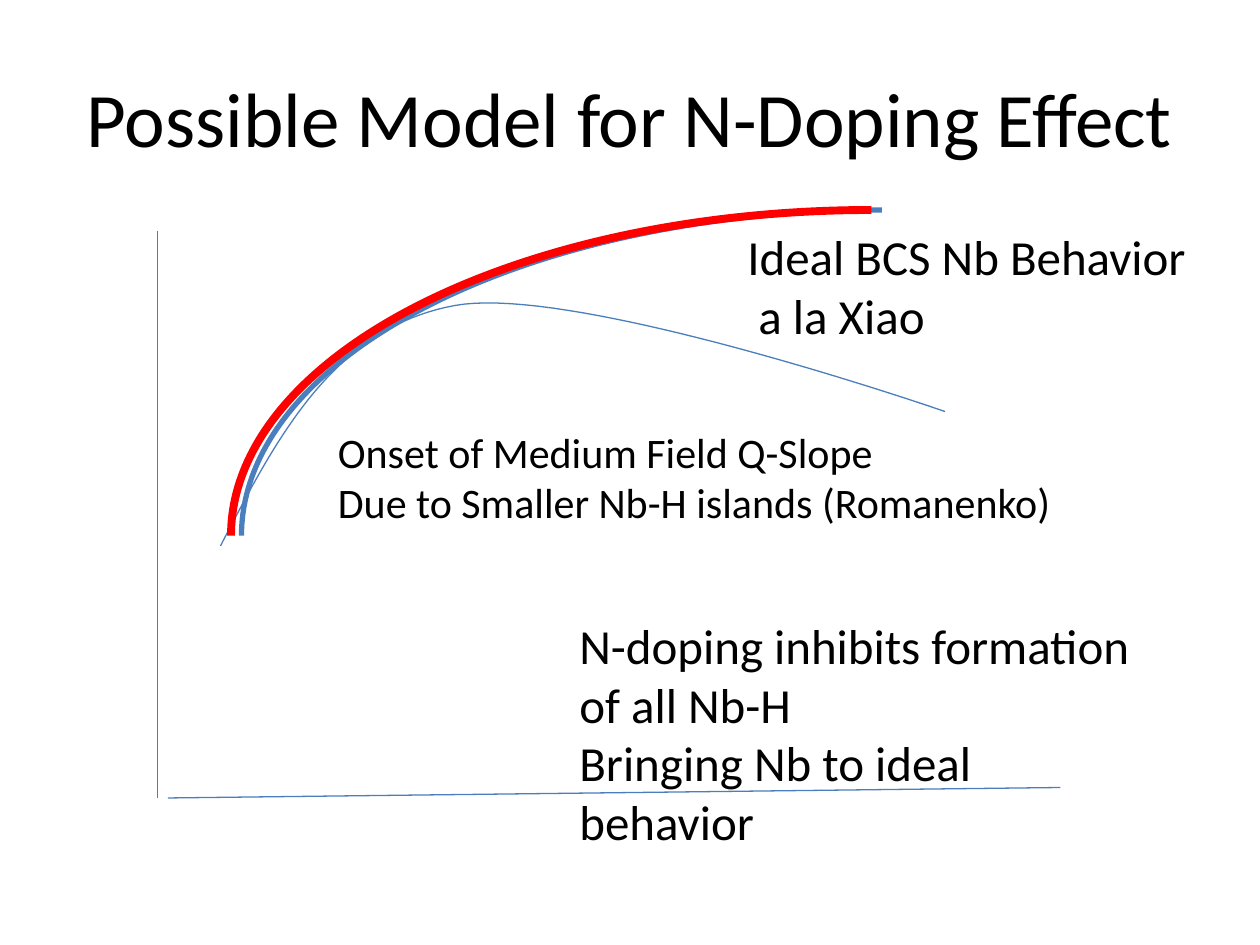
from pptx import Presentation
from pptx import util as u
from pptx.dml.color import RGBColor
from pptx.enum import shapes, text
from pptx.oxml.ns import qn
from lxml import etree

COLORS = {"ink": "000000", "blue": "4B7EBC", "red": "FF0000"}


def bezier(start, control1, control2, end, steps=40):
    """Evenly stepped points on a cubic curve."""
    points = []
    for step in range(steps + 1):
        t = step / steps
        weights = ((1 - t) ** 3, 3 * t * (1 - t) ** 2, 3 * t * t * (1 - t), t ** 3)
        corners = zip(start, control1, control2, end)
        xs, ys = list(zip(start, control1, control2, end))
        points.append(tuple(sum(w * v for w, v in zip(weights, axis))
                            for axis in (xs, ys)))
    return points


class SlideStyle:
    font = "Calibri"

    def __init__(self, slide):
        self.slide = slide

    def _color(self, name):
        return RGBColor.from_string(COLORS[name])

    def _stroke(self, line, color, width):
        line.color.rgb = self._color(color)
        line.width = u.Pt(width)

    def _write(self, frame, lines, size, align):
        for index, words in enumerate(lines):
            paragraph = frame.paragraphs[0] if index == 0 else frame.add_paragraph()
            paragraph.alignment = align
            run = paragraph.add_run()
            run.text = words
            run.font.name = self.font
            run.font.size = u.Pt(size)
            run.font.color.rgb = self._color("ink")

    def title(self, words, box, size=44):
        heading = self.slide.shapes.title
        heading.left, heading.top, heading.width, heading.height = map(u.Pt, box)
        heading.text_frame.vertical_anchor = text.MSO_ANCHOR.MIDDLE
        self._write(heading.text_frame, [words], size, text.PP_ALIGN.CENTER)

    def label(self, lines, box, size=28, wrap=False):
        frame = self.slide.shapes.add_textbox(*map(u.Pt, box)).text_frame
        frame.word_wrap = wrap
        frame.auto_size = text.MSO_AUTO_SIZE.SHAPE_TO_FIT_TEXT
        self._write(frame, lines, size, text.PP_ALIGN.LEFT)

    def axis(self, start, end, color="blue", width=0.75):
        line = self.slide.shapes.add_connector(
            shapes.MSO_CONNECTOR.STRAIGHT, *map(u.Pt, start + end))
        self._stroke(line.line, color, width)
        etree.SubElement(line._element.spPr, qn("a:effectLst"))

    def rising_arc(self, box, color, width):
        arc = self.slide.shapes.add_shape(shapes.MSO_SHAPE.ARC, *map(u.Pt, box))
        arc.shadow.inherit = False
        arc.fill.background()
        self._stroke(arc.line, color, width)
        arc._element.spPr.find(qn("a:xfrm")).set("flipH", "1")

    def curve(self, points, color="blue", width=0.75):
        first, *rest = [tuple(map(u.Pt, point)) for point in points]
        builder = self.slide.shapes.build_freeform(*first)
        builder.add_line_segments(rest, close=False)
        curve = builder.convert_to_shape()
        curve.shadow.inherit = False
        curve.fill.background()
        self._stroke(curve.line, color, width)


def main():
    deck = Presentation()
    deck.slide_width, deck.slide_height = u.Pt(720), u.Pt(540)
    style = SlideStyle(deck.slides.add_slide(deck.slide_layouts[5]))

    style.title("Possible Model for N-Doping Effect", (36, 21.6, 648, 90))

    # Axes of the sketch
    style.axis((90, 132), (90, 456))
    style.axis((96, 456), (606, 450))

    # Ideal behaviour
    style.rising_arc((138, 120, 732, 372), "blue", 3)
    style.label(["Ideal BCS Nb Behavior", " a la Xiao"], (420, 126, 268, 75))

    # Medium field Q-slope: steep rise, then a long decline
    peak = (260, 174.6)
    rise = bezier((126, 312), (158.4, 249.6), (190.8, 187.2), peak)
    decline = bezier(peak, (329, 162), (540, 235.2), (540, 235.2))
    style.curve(rise + decline[1:])
    style.label(["Onset of Medium Field Q-Slope",
                 "Due to Smaller Nb-H islands (Romanenko)"],
                (186, 240, 425.5, 65.5), size=24)

    # Effect of N-doping
    style.label(["N-doping inhibits formation of all Nb-H",
                 "Bringing Nb to ideal behavior"],
                (324, 348, 330, 143), wrap=True)
    style.rising_arc((132, 120, 732, 372), "red", 4.5)

    deck.save("out.pptx")


if __name__ == "__main__":
    main()
